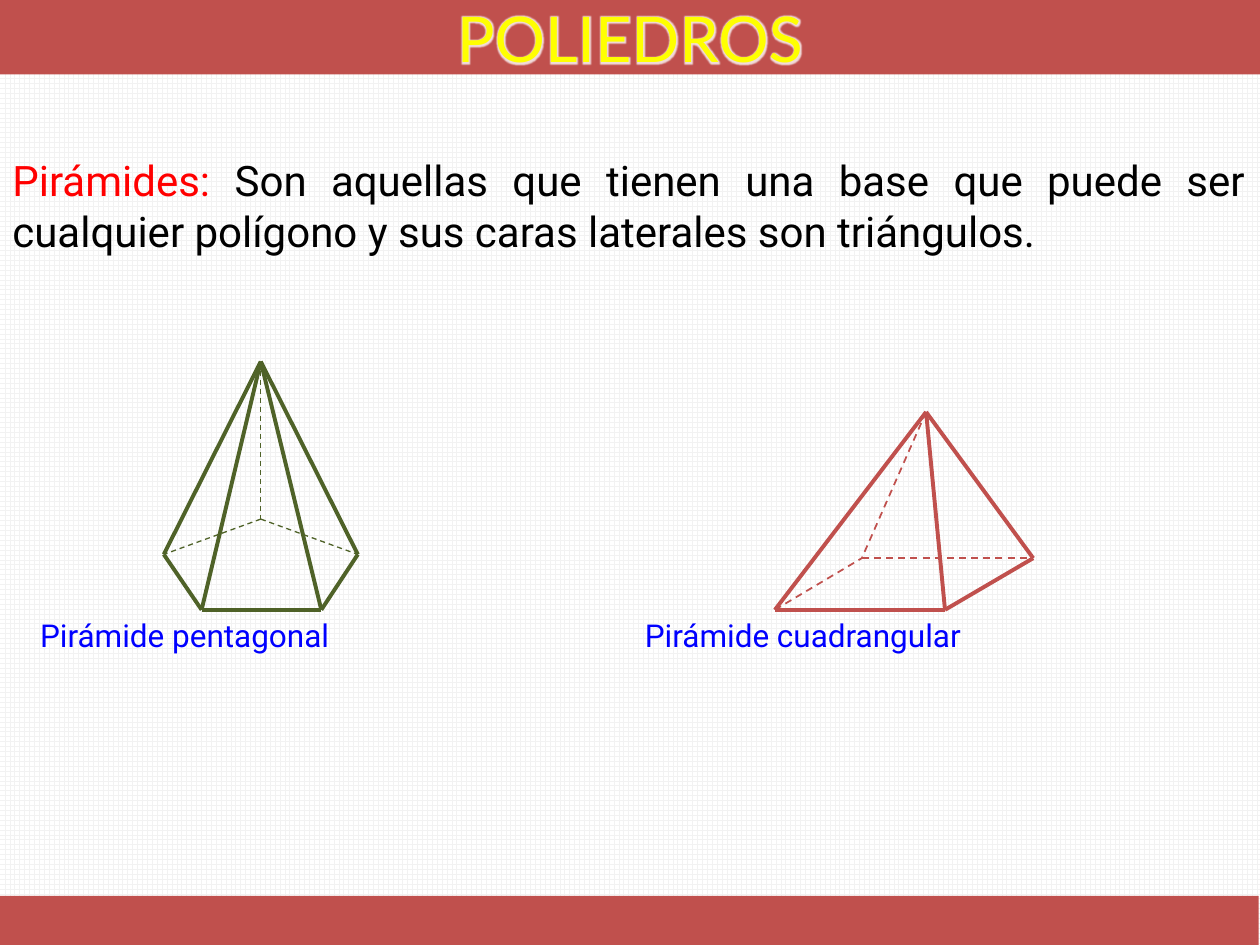
from pptx import Presentation
from pptx.dml.color import RGBColor as Rgb
from pptx.enum.dml import MSO_LINE as Dash, MSO_PATTERN as Pat
from pptx.enum.shapes import MSO_CONNECTOR as Con, MSO_SHAPE as Form
from pptx.enum.text import MSO_ANCHOR as Anc, MSO_AUTO_SIZE as Fit, PP_ALIGN as Al
from pptx.oxml import parse_xml
from pptx.oxml.ns import qn
from pptx.util import Inches, Pt
from lxml.etree import SubElement as Sub

INK = {"red": "C0504D", "green": "4F6228", "gold": "FFFF00", "blue": "0000FF",
       "term": "FF0000", "black": "000000", "white": "FFFFFF", "grid": "F2F2F2",
       "glow": "F2DCDB"}
NS = 'xmlns:a="http://schemas.openxmlformats.org/drawingml/2006/main"'

deck = Presentation()
deck.slide_width, deck.slide_height = Inches(10), Inches(7.5)
cell = deck.slide_width // 100
page = deck.slides.add_slide(deck.slide_layouts[6])

back = page.background.fill
back.patterned()
back.pattern = Pat.LARGE_GRID
back.fore_color.rgb = Rgb.from_string(INK["grid"])
back.back_color.rgb = Rgb.from_string(INK["white"])


def grid(*nums):
    return [round(n * cell) for n in nums]


def write(para, text, tone, **form):
    run = para.add_run()
    run.text = text
    for key, val in form.items():
        setattr(run.font, key, val)
    run.font.color.rgb = Rgb.from_string(INK[tone])
    return run


bars = []
for box in ((0, 0, 100, 5.9), (0, 71.1, 99.9, 3.9)):
    bar = page.shapes.add_shape(Form.RECTANGLE, *grid(*box))
    bar.shadow.inherit = False
    bar.fill.solid()
    bar.fill.fore_color.rgb = Rgb.from_string(INK["red"])
    bar.line.fill.background()
    bars.append(bar)

frame = bars[0].text_frame
frame.vertical_anchor = Anc.MIDDLE
head = frame.paragraphs[0]
head.alignment = Al.CENTER
props = write(head, "POLIEDROS", "gold", size=Pt(36), name="Lato").font._element
props.insert(0, parse_xml(
    f'<a:ln {NS} w="9525"><a:solidFill><a:srgbClr val="{INK["black"]}"/></a:solidFill></a:ln>'))
props.find(qn("a:solidFill")).addnext(parse_xml(
    f'<a:effectLst {NS}><a:glow rad="45720"><a:srgbClr val="{INK["glow"]}"/></a:glow></a:effectLst>'))

body = {"size": Pt(24), "name": "Roboto"}
note = {"size": Pt(18), "name": "Roboto"}
texts = [
    ((0, 11.8, 99.8, 13.1), Al.JUSTIFY, body, [
        ("Pirámides: ", "term"),
        ("Son aquellas que tienen una base que puede ser cualquier polígono "
         "y sus caras laterales son triángulos.", "black")]),
    ((2.2, 48.4, 37, 4), Al.LEFT, note, [("Pirámide pentagonal", "blue")]),
    ((50.2, 48.4, 41.3, 4), Al.LEFT, note, [("Pirámide cuadrangular", "blue")]),
]
for box, side, form, parts in texts:
    frame = page.shapes.add_textbox(*grid(*box)).text_frame
    for key, val in {"word_wrap": True, "auto_size": Fit.SHAPE_TO_FIT_TEXT}.items():
        setattr(frame, key, val)
    para = frame.paragraphs[0]
    para.alignment = side
    for text, tone in parts:
        write(para, text, tone, **form)

solids = [
    ("green", 0.75,
     {"T": (20.7, 28.7), "C": (20.7, 41.2), "R": (28.4, 44), "L": (13, 44),
      "A": (16, 48.4), "B": (25.5, 48.4)},
     "TC CL CR", "TR TL TB TA RB BA AL"),
    ("red", 1,
     {"T": (73.5, 32.7), "C": (68.4, 44.3), "R": (82, 44.3),
      "A": (61.5, 48.4), "B": (75, 48.4)},
     "AC CR TC", "AB BR TA TB TR"),
]
for tone, thin, spots, hidden, seen in solids:
    group = page.shapes.add_group_shape()
    for edges, width, dash in ((hidden, thin, Dash.DASH), (seen, 2.25, Dash.SOLID)):
        for start, end in edges.split():
            edge = group.shapes.add_connector(
                Con.STRAIGHT, *grid(*spots[start], *spots[end]))
            edge.line.color.rgb = Rgb.from_string(INK[tone])
            for key, val in {"width": Pt(width), "dash_style": dash}.items():
                setattr(edge.line, key, val)
            Sub(edge._element.spPr, qn("a:effectLst"))

deck.save("out.pptx")
